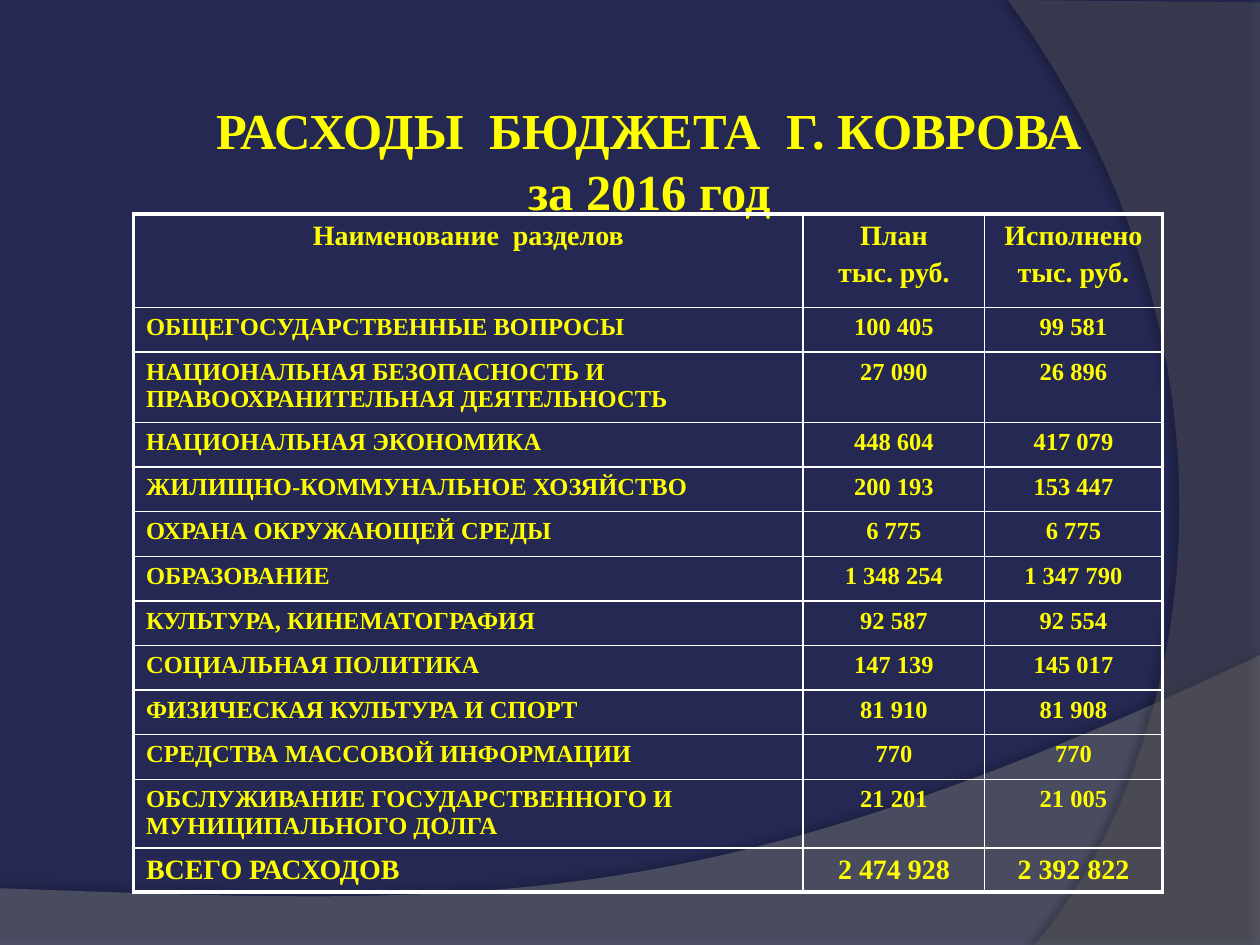
from lxml.etree import SubElement
from pptx import Presentation
from pptx.dml.color import RGBColor
from pptx.enum.text import MSO_ANCHOR, MSO_AUTO_SIZE, PP_ALIGN
from pptx.oxml.ns import qn
from pptx.util import Inches, Pt

MID = MSO_ANCHOR.MIDDLE
FIXED = MSO_AUTO_SIZE.NONE
LEFT, CENTER = PP_ALIGN.LEFT, PP_ALIGN.CENTER

COLORS = {"back": "242852", "text": "FFFF00", "line": "FFFFFF",
          "low": "7F7F7F", "side": "5E5E5E", "shade": "000000"}
FONT = "Times New Roman"
COLS, ROWS = 100, 75
THIN, THICK = 1, 2.25

TITLE = "РАСХОДЫ  БЮДЖЕТА  Г. КОВРОВА\vза 2016 год"
HEAD = ("Наименование  разделов", "План\nтыс. руб.", "Исполнено\nтыс. руб.")
ITEMS = [
    ("ОБЩЕГОСУДАРСТВЕННЫЕ ВОПРОСЫ", "100 405", "99 581"),
    ("НАЦИОНАЛЬНАЯ БЕЗОПАСНОСТЬ И ПРАВООХРАНИТЕЛЬНАЯ ДЕЯТЕЛЬНОСТЬ",
     "27 090", "26 896"),
    ("НАЦИОНАЛЬНАЯ ЭКОНОМИКА", "448 604", "417 079"),
    ("ЖИЛИЩНО-КОММУНАЛЬНОЕ ХОЗЯЙСТВО", "200 193", "153 447"),
    ("ОХРАНА ОКРУЖАЮЩЕЙ СРЕДЫ", "6 775", "6 775"),
    ("ОБРАЗОВАНИЕ", "1 348 254", "1 347 790"),
    ("КУЛЬТУРА, КИНЕМАТОГРАФИЯ", "92 587", "92 554"),
    ("СОЦИАЛЬНАЯ ПОЛИТИКА", "147 139", "145 017"),
    ("ФИЗИЧЕСКАЯ КУЛЬТУРА И СПОРТ", "81 910", "81 908"),
    ("СРЕДСТВА МАССОВОЙ ИНФОРМАЦИИ", "770", "770"),
    ("ОБСЛУЖИВАНИЕ ГОСУДАРСТВЕННОГО И МУНИЦИПАЛЬНОГО ДОЛГА",
     "21 201", "21 005"),
]
TOTAL = ("ВСЕГО РАСХОДОВ", "2 474 928", "2 392 822")
WIDTHS = (53.15, 14.4, 14.1)
HEIGHTS = [7.4, 3.54, 5.6] + [3.54] * 8 + [5.45, 3.5]


def curve(a, b, c, d, count=48):
    points = []
    for i in range(count + 1):
        t = i / count
        u = 1 - t
        points.append(tuple(
            u**3 * p + 3 * u * u * t * q + 3 * u * t * t * r + t**3 * s
            for p, q, r, s in zip(a, b, c, d)))
    return points


class Deck:
    def __init__(self):
        self.prs = Presentation()
        self.prs.slide_width, self.prs.slide_height = Inches(10), Inches(7.5)
        self.slide = self.prs.slides.add_slide(self.prs.slide_layouts[5])
        fill = self.slide.background.fill
        fill.solid()
        fill.fore_color.rgb = self.color("back")

    def color(self, name):
        return RGBColor.from_string(COLORS[name])

    def x(self, col):
        return round(self.prs.slide_width * col / COLS)

    def y(self, row):
        return round(self.prs.slide_height * row / ROWS)

    def style(self, para, size, align):
        para.alignment = align
        font = para.font
        font.name, font.size, font.bold = FONT, Pt(size), True
        font.color.rgb = self.color("text")

    def swoosh(self, points, name, alpha, shade, dist, angle):
        spots = [(self.x(col), self.y(row)) for col, row in points]
        pen = self.slide.shapes.build_freeform(*spots[0])
        pen.add_line_segments(spots[1:], close=True)
        shape = pen.convert_to_shape()
        shape.line.fill.background()
        shape.fill.solid()
        shape.fill.fore_color.rgb = self.color(name)
        shape.shadow.inherit = False
        props = shape.element.spPr
        tint = props.find(qn("a:solidFill"))[0]
        SubElement(tint, qn("a:alpha"), val=str(alpha * 1000))
        cast = SubElement(props.find(qn("a:effectLst")), qn("a:outerShdw"),
                          blurRad=str(Pt(4)), dist=str(Pt(dist)),
                          dir=str(angle * 60000), algn="ctr", rotWithShape="0")
        tone = SubElement(cast, qn("a:srgbClr"), val=COLORS["shade"])
        SubElement(tone, qn("a:alpha"), val=str(shade * 1000))

    def title(self, text, left, top, width, height):
        shape = self.slide.shapes.title
        shape.element.getparent().append(shape.element)
        shape.left, shape.top = self.x(left), self.y(top)
        shape.width, shape.height = self.x(width), self.y(height)
        frame = shape.text_frame
        frame.auto_size, frame.word_wrap = FIXED, True
        frame.vertical_anchor = MID
        frame.margin_left = frame.margin_right = frame.margin_top = self.x(0.5)
        frame.margin_bottom = self.y(5.1)
        frame.text = text
        self.style(frame.paragraphs[0], 28.8, CENTER)

    def border(self, cell, side, width):
        props = cell._tc.get_or_add_tcPr()
        line = SubElement(props, qn("a:ln" + side), w=str(Pt(width)))
        fill = SubElement(line, qn("a:solidFill"))
        SubElement(fill, qn("a:srgbClr"), val=COLORS["line"])

    def table(self, data, left, top, widths, heights):
        last, end = len(data) - 1, len(widths) - 1
        table = self.slide.shapes.add_table(
            len(data), len(widths), self.x(left), self.y(top),
            self.x(sum(widths)), self.y(sum(heights))).table
        table.first_row = table.horz_banding = False
        for col, width in zip(table.columns, widths):
            col.width = self.x(width)
        for row, height in zip(table.rows, heights):
            row.height = self.y(height)
        for r, texts in enumerate(data):
            size = 16 if r in (0, last) else 14
            for c, text in enumerate(texts):
                cell = table.cell(r, c)
                edges = {"L": c == 0, "R": c == end, "T": r == 0, "B": r == last}
                for side, outer in edges.items():
                    self.border(cell, side, THICK if outer else THIN)
                cell.fill.background()
                cell.text = text
                for i, para in enumerate(cell.text_frame.paragraphs):
                    if i:
                        para.space_before = Pt(size * 0.2)
                    self.style(para, size, CENTER if c or r == 0 else LEFT)


def main():
    deck = Deck()
    low = curve((100, 52), (55.9, 72.9), (39.1, 71.9), (0, 70.5))
    deck.swoosh([(0, 75), (100, 75)] + low, "low", 45, 35, 3.5, 270)
    side = curve((82.1, 75), (93.5, 61.9), (101.8, 30), (80, 0))
    deck.swoosh([(100, 0.2), (100, 75)] + side, "side", 40, 45, 4, 180)
    deck.title(TITLE, 10.6, 9.9, 81.9, 10.2)
    deck.table([HEAD, *ITEMS, TOTAL], 10.6, 17, WIDTHS, HEIGHTS)
    deck.prs.save("out.pptx")


if __name__ == "__main__":
    main()
